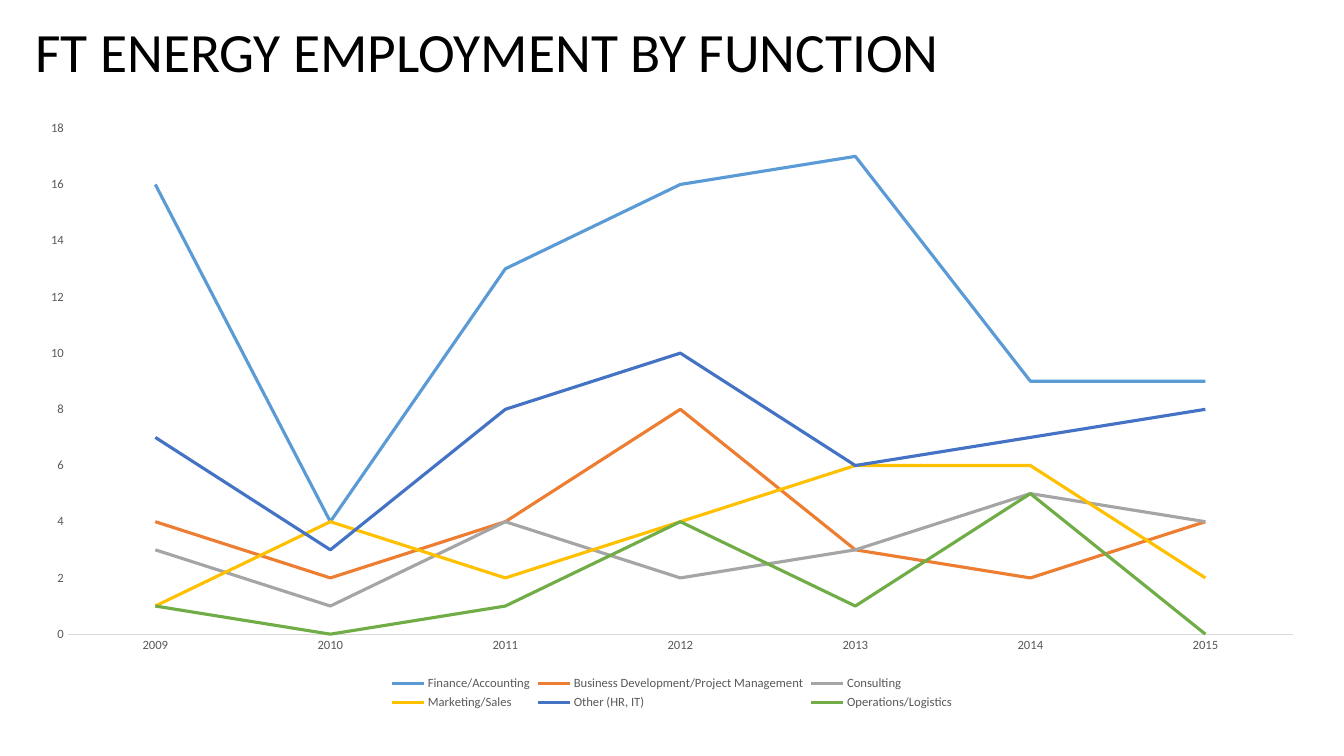
"""Build a slide with a line chart of full-time energy employment by function."""
import pptx
import pptx.chart.data
import pptx.dml.color
import pptx.enum.chart
import pptx.enum.dml
import pptx.enum.text
import pptx.util

BLACK = pptx.dml.color.RGBColor(0x00, 0x00, 0x00)
LABEL_GRAY = pptx.dml.color.RGBColor(0x59, 0x59, 0x59)
AXIS_GRAY = pptx.dml.color.RGBColor(0xD9, 0xD9, 0xD9)
BLUE = pptx.dml.color.RGBColor(0x5B, 0x9B, 0xD5)
ORANGE = pptx.dml.color.RGBColor(0xED, 0x7D, 0x31)
GRAY = pptx.dml.color.RGBColor(0xA5, 0xA5, 0xA5)
GOLD = pptx.dml.color.RGBColor(0xFF, 0xC0, 0x00)
NAVY = pptx.dml.color.RGBColor(0x44, 0x72, 0xC4)
GREEN = pptx.dml.color.RGBColor(0x70, 0xAD, 0x47)
FONT = "Calibri"

YEARS = [str(year) for year in range(2009, 2016)]
FUNCTIONS = [
    ("Finance/Accounting", (16, 4, 13, 16, 17, 9, 9), BLUE),
    ("Business Development/Project Management", (4, 2, 4, 8, 3, 2, 4), ORANGE),
    ("Consulting", (3, 1, 4, 2, 3, 5, 4), GRAY),
    ("Marketing/Sales", (1, 4, 2, 4, 6, 6, 2), GOLD),
    ("Other (HR, IT)", (7, 3, 8, 10, 6, 7, 8), NAVY),
    ("Operations/Logistics", (1, 0, 1, 4, 1, 5, 0), GREEN),
]


def style_font(font, size, color):
    font.name = FONT
    font.size = pptx.util.Pt(size)
    font.bold = False
    font.color.rgb = color


deck = pptx.Presentation()
deck.slide_width = pptx.util.Inches(13.33)
deck.slide_height = pptx.util.Inches(7.5)
slide = deck.slides.add_slide(deck.slide_layouts[5])
margin = pptx.util.Inches(0.25)

heading = slide.shapes.title
heading.left, heading.top = margin, pptx.util.Inches(0.17)
heading.width, heading.height = pptx.util.Inches(11.77), pptx.util.Inches(0.75)
heading_frame = heading.text_frame
heading_frame.auto_size = pptx.enum.text.MSO_AUTO_SIZE.NONE
heading_frame.vertical_anchor = pptx.enum.text.MSO_ANCHOR.MIDDLE
heading_line = heading_frame.paragraphs[0]
heading_line.alignment = pptx.enum.text.PP_ALIGN.LEFT
heading_line.line_spacing = 0.9
heading_run = heading_line.add_run()
heading_run.text = "FT ENERGY EMPLOYMENT BY FUNCTION"
style_font(heading_run.font, 39.6, BLACK)

employment = pptx.chart.data.CategoryChartData()
employment.categories = YEARS
for function, counts, color in FUNCTIONS:
    employment.add_series(function, counts)

chart = slide.shapes.add_chart(
    pptx.enum.chart.XL_CHART_TYPE.LINE,
    margin, pptx.util.Inches(1.08),
    deck.slide_width - 2 * margin, pptx.util.Inches(6),
    employment,
).chart
style_font(chart.font, 10, BLACK)
chart.has_title = False
chart.has_legend = True
chart.legend.position = pptx.enum.chart.XL_LEGEND_POSITION.BOTTOM
chart.legend.include_in_layout = False
style_font(chart.legend.font, 9, LABEL_GRAY)

for axis in (chart.category_axis, chart.value_axis):
    axis.has_major_gridlines = False
    axis.major_tick_mark = pptx.enum.chart.XL_TICK_MARK.NONE
    axis.minor_tick_mark = pptx.enum.chart.XL_TICK_MARK.NONE
    style_font(axis.tick_labels.font, 9, LABEL_GRAY)
chart.category_axis.format.line.color.rgb = AXIS_GRAY
chart.category_axis.format.line.width = pptx.util.Pt(0.75)
chart.value_axis.format.line.fill.background()
chart.value_axis.minimum_scale = 0
chart.value_axis.maximum_scale = 18
chart.value_axis.major_unit = 2

chart.plots[0].vary_by_categories = False
for trend, (function, counts, color) in zip(chart.plots[0].series, FUNCTIONS):
    trend.smooth = False
    trend.marker.style = pptx.enum.chart.XL_MARKER_STYLE.NONE
    trend.format.line.color.rgb = color
    trend.format.line.width = pptx.util.Pt(2.25)

deck.save("out.pptx")
